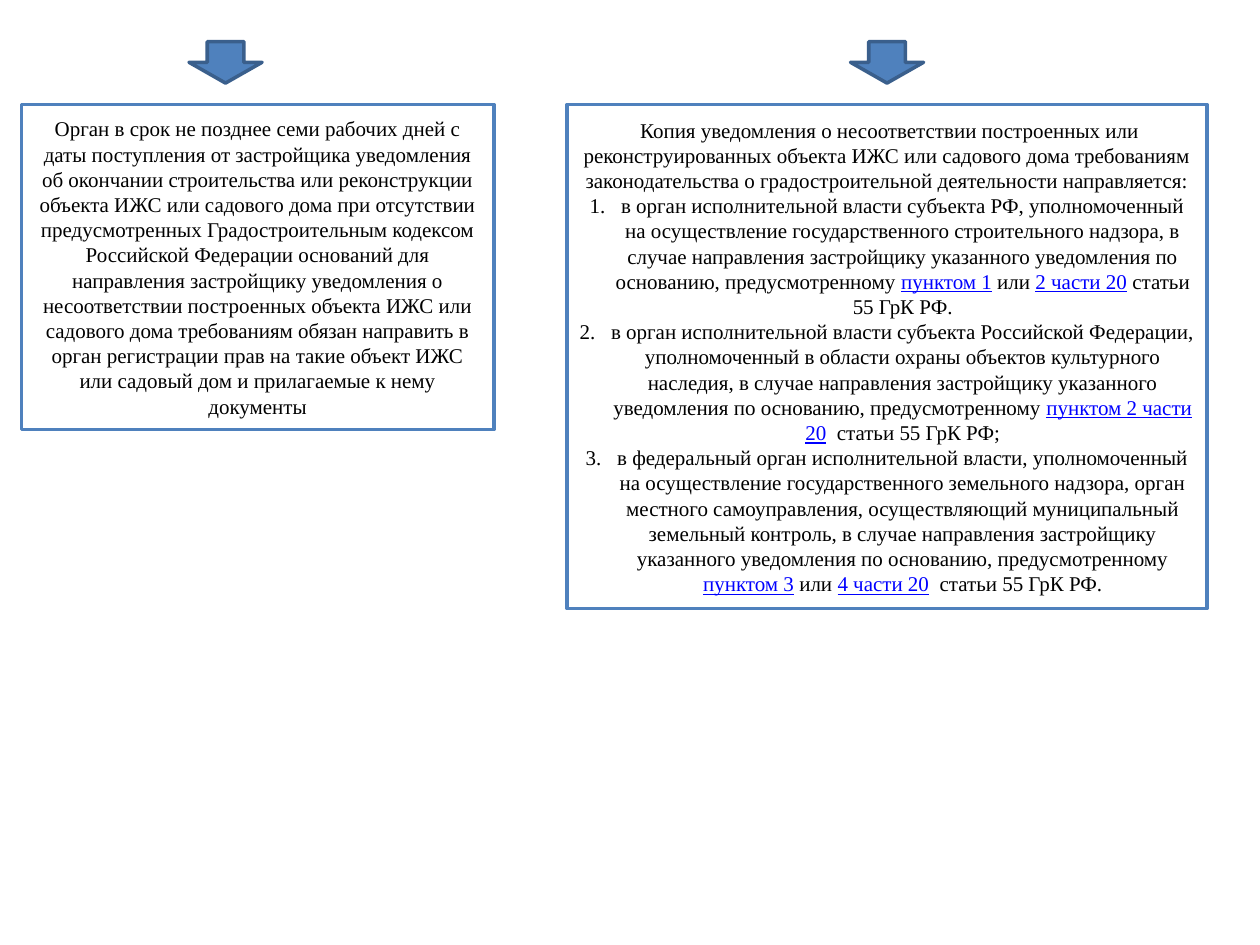
from lxml.etree import SubElement
from pptx import Presentation
from pptx.dml.color import RGBColor
from pptx.enum.shapes import MSO_SHAPE
from pptx.enum.text import MSO_ANCHOR, PP_ALIGN
from pptx.oxml.ns import qn
from pptx.util import Inches, Pt

COLORS = {
    "paper": "FFFFFF",
    "blue": "4F81BD",
    "dark_blue": "3A5F8C",
    "text": "000000",
    "reference": "0000FF",
}
FONT = {"name": "Times New Roman", "size": Pt(12)}

# Content: every second part between bars is an underlined legal reference
REGISTRATION = (
    "Орган в срок не позднее семи рабочих дней с даты поступления от застройщика "
    "уведомления об окончании строительства или реконструкции объекта ИЖС или садового "
    "дома при отсутствии предусмотренных Градостроительным кодексом Российской Федерации "
    "оснований для направления застройщику уведомления о несоответствии построенных "
    "объекта ИЖС или садового дома требованиям обязан направить в орган регистрации прав "
    "на такие объект ИЖС или садовый дом и прилагаемые к нему документы"
)
NOTICE = (
    " Копия уведомления о несоответствии построенных или реконструированных объекта ИЖС "
    "или садового дома требованиям законодательства о градостроительной деятельности "
    "направляется:"
)
RECIPIENTS = [
    "в орган исполнительной власти субъекта РФ, уполномоченный на осуществление "
    "государственного строительного надзора, в случае направления застройщику указанного "
    "уведомления по основанию, предусмотренному |пунктом 1| или |2 части 20| статьи 55 ГрК РФ.",
    "в орган исполнительной власти субъекта Российской Федерации, уполномоченный в области "
    "охраны объектов культурного наследия, в случае направления застройщику указанного "
    "уведомления по основанию, предусмотренному |пунктом 2 части 20|  статьи 55 ГрК РФ;",
    "в федеральный орган исполнительной власти, уполномоченный на осуществление "
    "государственного земельного надзора, орган местного самоуправления, осуществляющий "
    "муниципальный земельный контроль, в случае направления застройщику указанного "
    "уведомления по основанию, предусмотренному |пунктом 3| или |4 части 20|  статьи 55 ГрК РФ.",
]

# Columns: box left, width, height, arrow left, introduction, numbered items
COLUMNS = [
    (0.17, 3.75, 2.58, 1.5, REGISTRATION, []),
    (4.5, 5.08, 4, 6.75, NOTICE, RECIPIENTS),
]
BOX_TOP = 0.83
ARROW_TOP, ARROW_WIDTH, ARROW_HEIGHT = 0.33, 0.58, 0.33
NUMBER_INDENT = Inches(0.25)


def color(name):
    return RGBColor.from_string(COLORS[name])


def add_block(slide, kind, position, fill, line):
    shape = slide.shapes.add_shape(kind, *map(Inches, position))
    shape.shadow.inherit = False
    shape.fill.solid()
    shape.fill.fore_color.rgb = color(fill)
    shape.line.color.rgb = color(line)
    shape.line.width = Pt(2)
    return shape


def write_paragraph(paragraph, text):
    paragraph.alignment = PP_ALIGN.CENTER
    for index, part in enumerate(text.split("|")):
        is_reference = index % 2 == 1
        run = paragraph.add_run()
        run.text = part
        for name, value in {**FONT, "underline": is_reference}.items():
            setattr(run.font, name, value)
        run.font.color.rgb = color("reference" if is_reference else "text")


def number_paragraph(paragraph):
    properties = paragraph._p.get_or_add_pPr()
    properties.set("marL", str(NUMBER_INDENT))
    properties.set("indent", str(-NUMBER_INDENT))
    SubElement(properties, qn("a:buFont"), typeface="+mj-lt")
    SubElement(properties, qn("a:buAutoNum"), type="arabicPeriod")


def main():
    presentation = Presentation()
    presentation.slide_width = Inches(10)
    presentation.slide_height = Inches(7.5)
    slide = presentation.slides.add_slide(presentation.slide_layouts[6])

    for left, width, height, arrow_left, introduction, items in COLUMNS:
        # Text box with its introduction and numbered recipients
        box = add_block(slide, MSO_SHAPE.RECTANGLE, (left, BOX_TOP, width, height),
                        "paper", "blue")
        frame = box.text_frame
        frame.word_wrap = True
        frame.vertical_anchor = MSO_ANCHOR.MIDDLE
        write_paragraph(frame.paragraphs[0], introduction)
        for item in items:
            paragraph = frame.add_paragraph()
            write_paragraph(paragraph, item)
            number_paragraph(paragraph)

        # Arrow leading into the box
        add_block(slide, MSO_SHAPE.DOWN_ARROW,
                  (arrow_left, ARROW_TOP, ARROW_WIDTH, ARROW_HEIGHT), "blue", "dark_blue")

    presentation.save("out.pptx")


if __name__ == "__main__":
    main()
